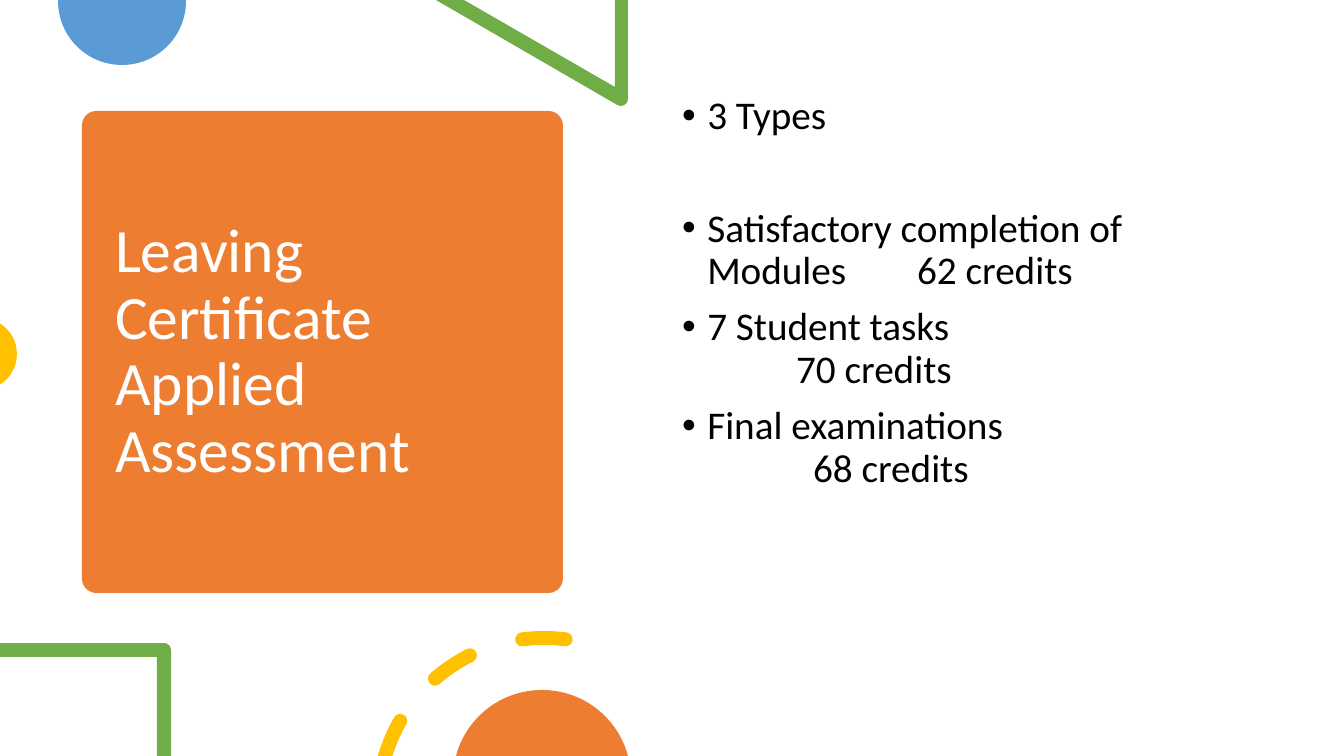
from math import ceil, cos, radians, sin, tan

from lxml.etree import SubElement
from pptx import Presentation
from pptx.dml.color import RGBColor
from pptx.enum.shapes import MSO_SHAPE as SHAPE
from pptx.enum.text import MSO_ANCHOR as ANCHOR, MSO_AUTO_SIZE as AUTO_SIZE, PP_ALIGN as ALIGN
from pptx.oxml.ns import qn
from pptx.util import Emu, Pt

PX = 914400 / 100.8
ORANGE = RGBColor(0xED, 0x7D, 0x31)
BLUE = RGBColor(0x5B, 0x9B, 0xD5)
GREEN = RGBColor(0x70, 0xAD, 0x47)
YELLOW = RGBColor(0xFF, 0xC0, 0x00)
WHITE = RGBColor(0xFF, 0xFF, 0xFF)
BLACK = RGBColor(0x00, 0x00, 0x00)


def arc(x, y, radius, start, end):
    steps = max(1, ceil(abs(end - start) / 90))
    angles = [radians(start + (end - start) * i / steps) for i in range(steps + 1)]
    points = [(x + radius * cos(angles[0]), y + radius * sin(angles[0]))]
    for a, b in zip(angles, angles[1:]):
        pull = radius * 4 / 3 * tan((b - a) / 4)
        left, top = points[-1][:2]
        right, bottom = x + radius * cos(b), y + radius * sin(b)
        points.append((
            right, bottom,
            left - pull * sin(a), top + pull * cos(a),
            right + pull * sin(b), bottom - pull * cos(b),
        ))
    return points


def add_outline(contours, color):
    contours = [[[round(v * 100) for v in point] for point in contour] for contour in contours]
    builder = slide.shapes.build_freeform(*contours[0][0][:2], scale=PX / 100)
    for i, contour in enumerate(contours):
        if i:
            builder.move_to(*contour[0][:2])
        builder.add_line_segments([point[:2] for point in contour[1:]], close=True)
    shape = builder.convert_to_shape()
    min_x = min(point[0] for contour in contours for point in contour)
    min_y = min(point[1] for contour in contours for point in contour)
    segments = list(shape.element.iter(qn("a:lnTo")))
    ends = [point for contour in contours for point in contour[1:]]
    for segment, point in zip(segments, ends):
        if len(point) == 6:
            segment.tag = qn("a:cubicBezTo")
            for i in (0, 1):
                control = SubElement(segment, qn("a:pt"))
                control.set("x", str(point[2 + 2 * i] - min_x))
                control.set("y", str(point[3 + 2 * i] - min_y))
                segment.insert(i, control)
    shape.shadow.inherit = False
    shape.fill.solid()
    shape.fill.fore_color.rgb = color
    shape.line.fill.background()


presentation = Presentation()
presentation.slide_width = Emu(round(1344 * PX))
presentation.slide_height = Emu(round(756 * PX))
slide = presentation.slides.add_slide(presentation.slide_layouts[1])
title, body = slide.placeholders

card = slide.shapes.add_shape(SHAPE.ROUNDED_RECTANGLE, *[Emu(round(v * PX)) for v in (82, 111, 481, 482)])
card.adjustments[0] = 0.03
card.shadow.inherit = False
card.fill.solid()
card.fill.fore_color.rgb = ORANGE
card.line.fill.background()
slide.shapes.element.insert(2, card.element)

for placeholder, box, anchor in (
    (title, (105, 123, 435, 459), ANCHOR.MIDDLE),
    (body, (672, 91, 580, 539), ANCHOR.TOP),
):
    placeholder.left, placeholder.top, placeholder.width, placeholder.height = [
        Emu(round(v * PX)) for v in box
    ]
    placeholder.text_frame.vertical_anchor = anchor
    placeholder.text_frame.auto_size = AUTO_SIZE.NONE
    placeholder.text_frame.word_wrap = True

paragraph = title.text_frame.paragraphs[0]
paragraph.alignment = ALIGN.LEFT
paragraph.line_spacing = 0.9
run = paragraph.add_run()
run.text = "Leaving Certificate Applied Assessment"
run.font.name = "Calibri"
run.font.size = Pt(44)
run.font.color.rgb = WHITE

assessments = [
    (["3 Types"], 0, 10),
    (["Satisfactory completion of Modules\t62 credits"], 235, 50),
    (["7 Student tasks", "\t70 credits"], 114, 10),
    (["Final examinations", "\t68 credits"], 131, 10),
]
for i, (lines, tab, space_before) in enumerate(assessments):
    frame = body.text_frame
    paragraph = frame.add_paragraph() if i else frame.paragraphs[0]
    paragraph.line_spacing = 0.9
    paragraph.space_before = Pt(space_before)
    properties = paragraph._p.get_or_add_pPr()
    properties.set("marL", "228600")
    properties.set("indent", "-228600")
    if tab:
        stops = SubElement(properties, qn("a:tabLst"))
        SubElement(stops, qn("a:tab"), pos=str(round(tab * PX)), algn="l")
    for j, line in enumerate(lines):
        if j:
            paragraph.add_line_break()
        run = paragraph.add_run()
        run.text = line
        run.font.name = "Calibri"
        run.font.size = Pt(28)
        run.font.color.rgb = BLACK
    paragraph.font.size = Pt(28)

add_outline([arc(122, 1, 64, 0, 180) + [(58, 0), (186, 0)]], BLUE)
add_outline(
    [[(628, 0), (615, 0), (615, 87), (464, 0), (436, 0)] + arc(621, 99, 7, 120, 0)], GREEN
)
add_outline([arc(-19, 354, 36, -58, 0) + arc(-19, 354, 36, 0, 58)[1:]], YELLOW)
add_outline(
    [[(0, 643), (0, 657), (157, 657), (157, 756), (171, 756)] + arc(164, 650, 7, 0, -90)], GREEN
)

dashes = []
for outer_start, inner_start, end in ((196, 197.5, 210), (229, 229, 243.5), (262.5, 262.5, 277.5)):
    dash = arc(544, 804, 173, outer_start, end)
    cap_x, cap_y = arc(544, 804, 166, end, end)[0]
    dash += arc(cap_x, cap_y, 7, end, end + 180)[1:]
    dash += arc(544, 804, 159, end, inner_start)[1:]
    if outer_start == inner_start:
        cap_x, cap_y = arc(544, 804, 166, outer_start, outer_start)[0]
        dash += arc(cap_x, cap_y, 7, outer_start + 180, outer_start + 360)[1:]
    dashes.append(dash)
add_outline(dashes, YELLOW)
add_outline([arc(542, 779, 89, 195, 345)], ORANGE)

presentation.save("out.pptx")
